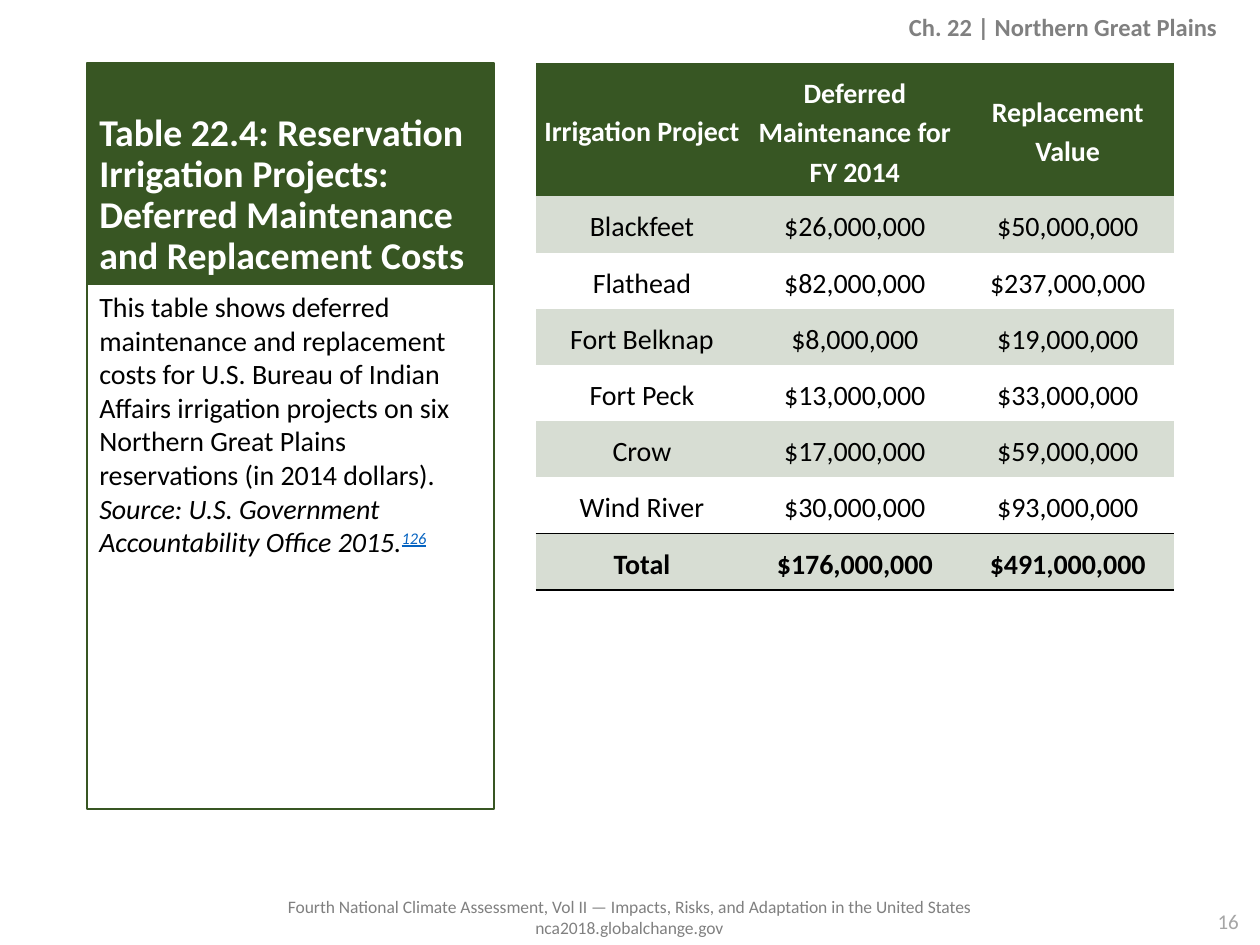
from lxml import etree
from pptx import Presentation
from pptx.dml.color import RGBColor
from pptx.enum.text import MSO_ANCHOR, PP_ALIGN
from pptx.enum.shapes import MSO_SHAPE
from pptx.oxml.ns import qn
from pptx.util import Inches, Pt

TOP, MIDDLE, BOTTOM = MSO_ANCHOR.TOP, MSO_ANCHOR.MIDDLE, MSO_ANCHOR.BOTTOM
LEFT, CENTER, RIGHT = PP_ALIGN.LEFT, PP_ALIGN.CENTER, PP_ALIGN.RIGHT
RECT = MSO_SHAPE.RECTANGLE

GREEN, HEADER, BAND = "385623", "375623", "D7DDD3"
WHITE, BLACK, GRAY, PALE, BLUE = "FFFFFF", "000000", "808080", "A6A6A6", "0563C1"

ROWS = [
    ("Irrigation Project", "Deferred Maintenance for FY 2014", "Replacement Value"),
    ("Blackfeet", "$26,000,000", "$50,000,000"),
    ("Flathead", "$82,000,000", "$237,000,000"),
    ("Fort Belknap", "$8,000,000", "$19,000,000"),
    ("Fort Peck", "$13,000,000", "$33,000,000"),
    ("Crow", "$17,000,000", "$59,000,000"),
    ("Wind River", "$30,000,000", "$93,000,000"),
    ("Total", "$176,000,000", "$491,000,000"),
]


def rgb(value):
    return RGBColor.from_string(value)


def add_run(p, text, size=16, color=BLACK, bold=False, italic=False,
            underline=False, baseline=None, font="Calibri"):
    r = p.add_run()
    r.text = text
    f = r.font
    f.name, f.size, f.bold, f.italic = font, Pt(size), bold, italic
    f.underline = underline
    f.color.rgb = rgb(color)
    if baseline:
        r._r.get_or_add_rPr().set("baseline", str(baseline * 1000))


class Deck:
    """Holds the style and the current slide of the deck."""

    def __init__(self):
        self.prs = Presentation()
        self.prs.slide_width, self.prs.slide_height = Inches(10), Inches(7.5)
        self.s = self.prs.slides.add_slide(self.prs.slide_layouts[6])

    def fill_text(self, tf, paragraphs, anchor=TOP, align=LEFT, spacing=None, after=None):
        tf.word_wrap = True
        tf.vertical_anchor = anchor
        for i, runs in enumerate(paragraphs):
            p = tf.add_paragraph() if i else tf.paragraphs[0]
            p.alignment = align
            if spacing:
                p.line_spacing = spacing
            if after:
                p.space_after = Pt(after)
            for text, style in runs:
                add_run(p, text, **style)

    def text(self, box, lines, anchor=TOP, align=LEFT, spacing=None, **style):
        sp = self.s.shapes.add_textbox(*map(Inches, box))
        self.fill_text(sp.text_frame, [[(line, style)] for line in lines],
                       anchor, align, spacing)

    def panel(self, box, runs, fill=None, **layout):
        sp = self.s.shapes.add_shape(RECT, *map(Inches, box))
        sp.shadow.inherit = False
        if fill:
            sp.fill.solid()
            sp.fill.fore_color.rgb = rgb(fill)
        else:
            sp.fill.background()
        sp.line.color.rgb = rgb(GREEN)
        sp.line.width = Pt(1.5)
        self.fill_text(sp.text_frame, [runs], **layout)

    def borders(self, cell, ruled):
        tcPr = cell._tc.get_or_add_tcPr()
        for side in "LRTB":
            ln = etree.SubElement(tcPr, qn(f"a:ln{side}"), w=str(Pt(1)))
            if side in ruled:
                fill = etree.SubElement(ln, qn("a:solidFill"))
                etree.SubElement(fill, qn("a:srgbClr"), val=BLACK)
            else:
                etree.SubElement(ln, qn("a:noFill"))

    def table(self, left, top, col_width, row_height, rows):
        n, m = len(rows), len(rows[0])
        frame = self.s.shapes.add_table(n, m, Inches(left), Inches(top),
                                        Inches(col_width * m), Inches(row_height * n))
        table = frame.table
        table.first_row = table.horz_banding = False
        rules = {n - 2: "B", n - 1: "TB"}
        for i, row in enumerate(rows):
            fill = HEADER if i == 0 else BAND if i % 2 else WHITE
            style = dict(color=BLACK if i else WHITE, bold=i in (0, n - 1))
            for j, text in enumerate(row):
                cell = table.cell(i, j)
                cell.margin_left = cell.margin_right = Inches(0.07)
                cell.margin_top = cell.margin_bottom = Inches(0.07)
                self.borders(cell, rules.get(i, ""))
                cell.fill.solid()
                cell.fill.fore_color.rgb = rgb(fill)
                self.fill_text(cell.text_frame, [[(text, style)]], TOP, CENTER, 1.15, 6)
                cell.vertical_anchor = MIDDLE


def main():
    deck = Deck()
    deck.text((2.03, 7.06, 5.93, 0.44),
              ["Fourth National Climate Assessment, Vol II — Impacts, Risks, "
               "and Adaptation in the United States", "nca2018.globalchange.gov"],
              align=CENTER, size=10, color=GRAY)
    deck.text((8.02, 7.16, 1.91, 0.27), ["16"], align=RIGHT, size=12, color=PALE)
    deck.panel((0.69, 0.5, 3.23, 1.75),
               [("Table 22.4: Reservation Irrigation Projects: Deferred Maintenance "
                 "and Replacement Costs", dict(size=21.6, color=WHITE, bold=True))],
               fill=GREEN, anchor=BOTTOM, spacing=0.9)
    deck.panel((0.69, 2.25, 3.23, 4.17),
               [("This table shows deferred maintenance and replacement costs for U.S. "
                 "Bureau of Indian Affairs irrigation projects on six Northern Great "
                 "Plains reservations (in 2014 dollars). ", {}),
                ("Source: U.S. Government Accountability Office 2015.", dict(italic=True)),
                ("126", dict(italic=True, color=BLUE, underline=True, baseline=30))],
               after=6)
    deck.text((0.23, 0.07, 9.53, 0.31), ["Ch. 22 | Northern Great Plains"],
              anchor=MIDDLE, align=RIGHT, spacing=0.9, size=14, color=GRAY, bold=True)
    deck.table(4.25, 0.5, 1.69, 0.41, ROWS)
    deck.prs.save("out.pptx")


if __name__ == "__main__":
    main()
